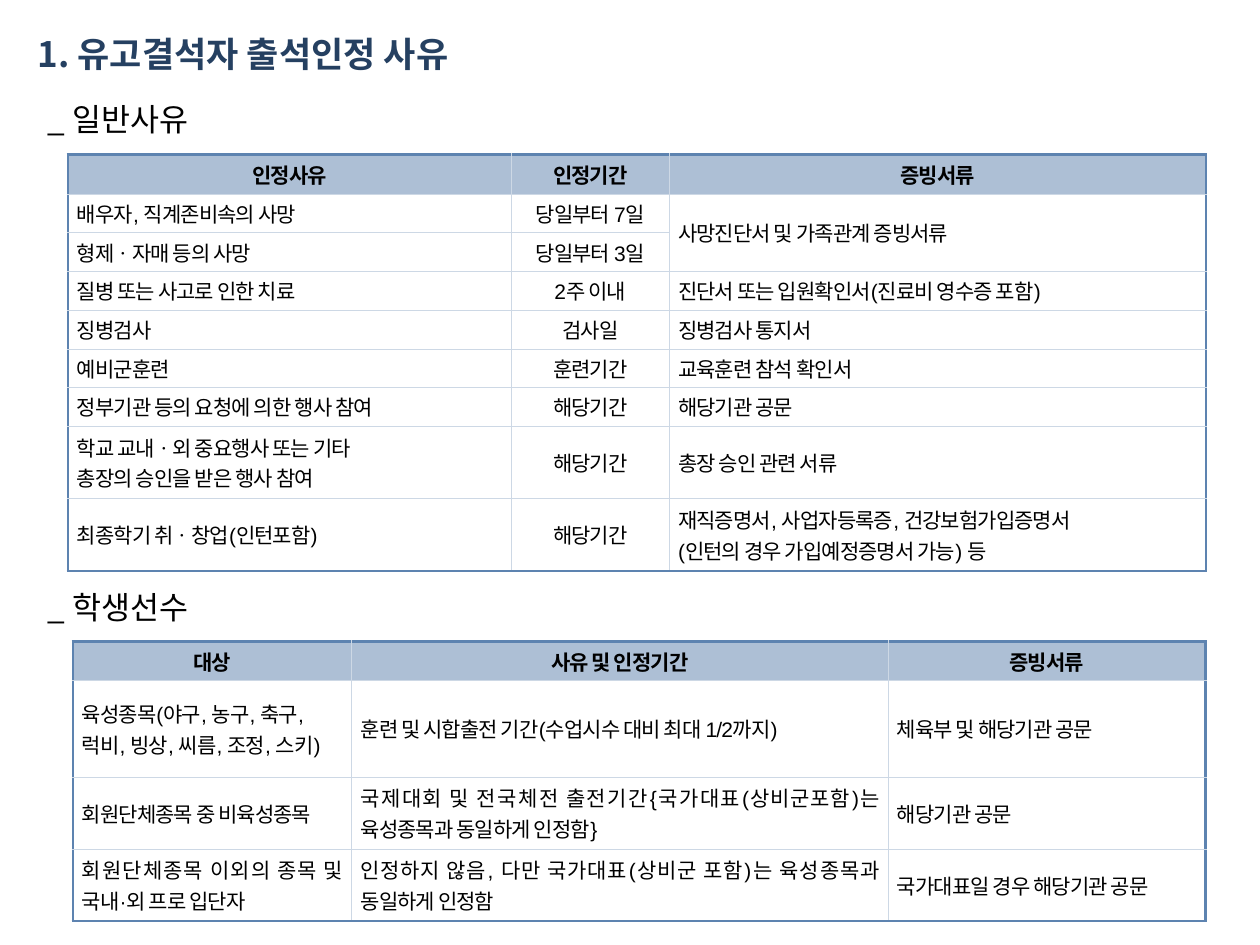
from lxml import etree
from pptx import Presentation
from pptx.dml.color import RGBColor
from pptx.enum.text import MSO_ANCHOR, MSO_AUTO_SIZE, PP_ALIGN
from pptx.oxml.ns import qn
from pptx.util import Cm, Pt

LEFT, CENTER, JUSTIFY = PP_ALIGN.LEFT, PP_ALIGN.CENTER, PP_ALIGN.JUSTIFY
MIDDLE = MSO_ANCHOR.MIDDLE
FIT_SHAPE = MSO_AUTO_SIZE.SHAPE_TO_FIT_TEXT

NAVY = RGBColor(0x25, 0x40, 0x61)
BLACK = RGBColor(0x00, 0x00, 0x00)
WHITE = RGBColor(0xFF, 0xFF, 0xFF)
HEADER_BLUE = RGBColor(0xAD, 0xBF, 0xD5)
FRAME_BLUE = RGBColor(0x5D, 0x83, 0xB0)
GRID_BLUE = RGBColor(0xCD, 0xD8, 0xE5)

KOREAN_FONT = "Noto Sans CJK KR"
TABLE_FONT = "Arial"
OUTER_BORDER = (FRAME_BLUE, 1.7)
INNER_BORDER = (GRID_BLUE, 0.28)

HEADINGS = [
    ("1. 유고결석자 출석인정 사유", (0.51, 0.53, 9.7, 1.12),
     {"size": 20, "color": NAVY, "bold": True}),
    ("_ 일반사유", (0.71, 1.9, 3.58, 1.02), {"size": 18}),
    ("_ 학생선수", (0.71, 11.73, 3.58, 1.02), {"size": 18}),
]

GENERAL_REASONS = {
    "position": (1.37, 3.12),
    "columns": [8.94, 3.18, 10.82],
    "rows": [0.79] + [0.78] * 6 + [1.46] * 2,
    "centered": {1},
    "merges": [((1, 2), (2, 2))],
    "cells": [
        ("인정사유", "인정기간", "증빙서류"),
        ("배우자, 직계존비속의 사망", "당일부터 7일", "사망진단서 및 가족관계 증빙서류"),
        ("형제ㆍ자매 등의 사망", "당일부터 3일", None),
        ("질병 또는 사고로 인한 치료", "2주 이내", "진단서 또는 입원확인서(진료비 영수증 포함)"),
        ("징병검사", "검사일", "징병검사 통지서"),
        ("예비군훈련", "훈련기간", "교육훈련 참석 확인서"),
        ("정부기관 등의 요청에 의한 행사 참여", "해당기간", "해당기관 공문"),
        ("학교 교내ㆍ외 중요행사 또는 기타 \n총장의 승인을 받은 행사 참여", "해당기간",
         "총장 승인 관련 서류"),
        ("최종학기 취ㆍ창업(인턴포함)", "해당기간",
         "재직증명서, 사업자등록증, 건강보험가입증명서\n(인턴의 경우 가입예정증명서 가능) 등"),
    ],
}

STUDENT_ATHLETES = {
    "position": (1.47, 12.93),
    "columns": [5.62, 10.81, 6.4],
    "rows": [0.79] + [1.45] * 3,
    "centered": set(),
    "merges": [],
    "cells": [
        ("대상", "사유 및 인정기간", "증빙서류"),
        ("육성종목(야구, 농구, 축구, \n럭비, 빙상, 씨름, 조정, 스키)",
         "훈련 및 시합출전 기간(수업시수 대비 최대 1/2까지)", "체육부 및 해당기관 공문"),
        ("회원단체종목 중 비육성종목",
         [("국제대회 및 전국체전 출전기간{국가대표", -0.1),
          ("(상비군포함)는 육성종목과 동일하게 인정함}", -0.5)],
         "해당기관 공문"),
        ("회원단체종목 이외의 종목 및 국내·외 프로 입단자",
         [("인정하지 않음, 다만 국가대표(상비군 포함)는", -0.6),
          (" 육성종목과 동일하게 인정함", -0.5)],
         "국가대표일 경우 해당기관 공문"),
    ],
}


def write_text(frame, text, size=12, font=KOREAN_FONT, color=BLACK, bold=False,
               align=LEFT, spacing=0):
    if isinstance(text, str):
        paragraphs = [[(line, spacing)] for line in text.split("\n")]
    else:
        paragraphs = [text]
    for index, runs in enumerate(paragraphs):
        paragraph = frame.add_paragraph() if index else frame.paragraphs[0]
        paragraph.alignment = align
        for content, run_spacing in runs:
            run = paragraph.add_run()
            run.text = content
            run.font.size = Pt(size)
            run.font.bold = bold
            run.font.color.rgb = color
            run.font.name = font
            properties = run.font._element
            latin = properties.find(qn("a:latin"))
            east_asian = etree.Element(qn("a:ea"), typeface=KOREAN_FONT)
            latin.addnext(east_asian)
            if run_spacing:
                properties.set("spc", str(round(run_spacing * 100)))


def set_borders(cell, borders):
    properties = cell._tc.get_or_add_tcPr()
    for index, (side, (color, width)) in enumerate(borders.items()):
        line = etree.Element(qn(f"a:ln{side}"), w=str(Pt(width)))
        fill = etree.SubElement(line, qn("a:solidFill"))
        etree.SubElement(fill, qn("a:srgbClr"), val=str(color))
        properties.insert(index, line)


def add_grid(slide, grid):
    columns, rows = grid["columns"], grid["rows"]
    left, top = grid["position"]
    shape = slide.shapes.add_table(len(rows), len(columns), Cm(left), Cm(top),
                                   Cm(sum(columns)), Cm(sum(rows)))
    table = shape.table
    for column, width in zip(table.columns, columns):
        column.width = Cm(width)
    for row, height in zip(table.rows, rows):
        row.height = Cm(height)
    for start, end in grid["merges"]:
        table.cell(*start).merge(table.cell(*end))

    last_row, last_column = len(rows) - 1, len(columns) - 1
    for r, texts in enumerate(grid["cells"]):
        for c, text in enumerate(texts):
            cell = table.cell(r, c)
            header = r == 0
            cell.vertical_anchor = MIDDLE
            cell.margin_left = cell.margin_right = Cm(0.18)
            cell.margin_top = cell.margin_bottom = Cm(0.05)
            cell.fill.solid()
            cell.fill.fore_color.rgb = HEADER_BLUE if header else WHITE
            edges = {"L": c == 0, "R": c == last_column, "T": header, "B": r == last_row}
            set_borders(cell, {side: OUTER_BORDER if outer else INNER_BORDER
                               for side, outer in edges.items()})
            if text is not None:
                centered = header or c in grid["centered"]
                write_text(cell.text_frame, text, font=TABLE_FONT, bold=header,
                           align=CENTER if centered else JUSTIFY, spacing=-0.5)


def main():
    presentation = Presentation()
    presentation.slide_width, presentation.slide_height = Cm(25.4), Cm(19.05)
    slide = presentation.slides.add_slide(presentation.slide_layouts[6])
    for grid in (GENERAL_REASONS, STUDENT_ATHLETES):
        add_grid(slide, grid)
    for text, box, style in HEADINGS:
        frame = slide.shapes.add_textbox(*map(Cm, box)).text_frame
        frame.word_wrap = False
        frame.auto_size = FIT_SHAPE
        write_text(frame, text, **style)
    presentation.save("out.pptx")


if __name__ == "__main__":
    main()
